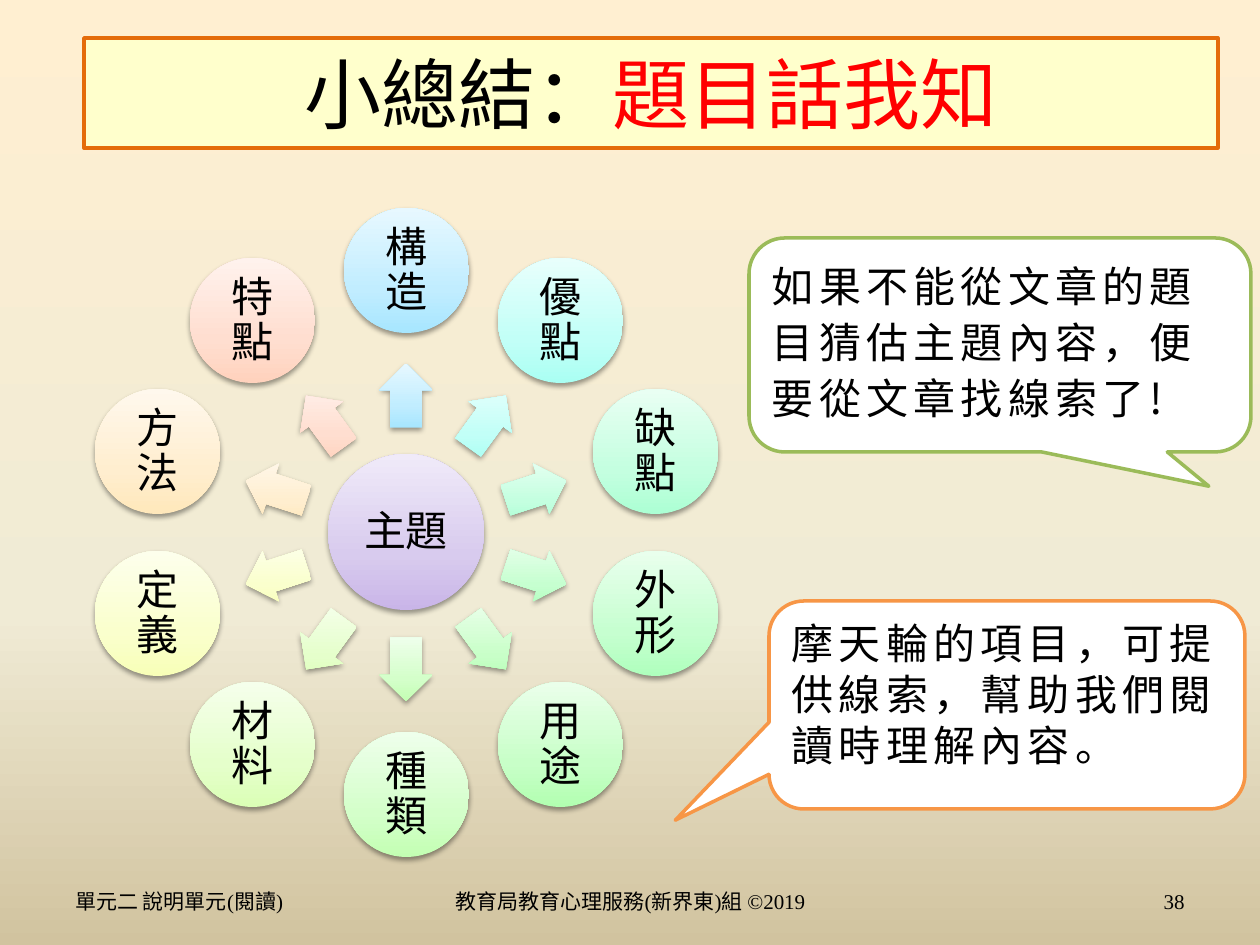
import math
import pptx
import pptx.util
import pptx.dml.color
import pptx.enum.shapes
import pptx.enum.text
import pptx.oxml.ns
import lxml.etree

PX = 914400 // 126
FONT = "Noto Sans CJK SC"
SERIF = "Times New Roman"
KIND = pptx.enum.shapes.MSO_SHAPE
ALIGN = pptx.enum.text.PP_ALIGN
ANCHOR = pptx.enum.text.MSO_ANCHOR
HUB = (406, 532)
COLORS = {
    "ink": "000000", "red": "FF0000", "white": "FFFFFF", "cream": "FFFFCC",
    "rust": "E46C0A", "green": "9BBB59", "orange": "F79646",
}
SKY = [(0, "FFEFD1"), (65, "F0EBD5"), (100, "D1C39F")]
CORE = ("C9B5E8", "D8CBEE", "F0EAF9")
TOPICS = [
    ("構造", ("A7E6FF", "C1EDFF", "E7F8FF")),
    ("優點", ("AAFFF3", "C2FFF7", "E8FFFC")),
    ("缺點", ("ACFFD4", "C4FFE0", "E9FFF3")),
    ("外形", ("AFFFBD", "C6FFD0", "E9FFED")),
    ("用途", ("B2FFB1", "C8FFC8", "EAFFEA")),
    ("種類", ("C3FFB3", "D4FFCA", "EEFFEB")),
    ("材料", ("DBFFB6", "E5FFCB", "F5FFEB")),
    ("定義", ("F8FFB8", "FAFFCD", "FDFFEC")),
    ("方法", ("FFE8BB", "FFEECF", "FFF8ED")),
    ("特點", ("FFD2BD", "FFDED0", "FFF2ED")),
]


def rgb(name):
    """Return the colour of a palette name."""
    return pptx.dml.color.RGBColor.from_string(COLORS[name])


def add(node, tag, **attrs):
    """Append a DrawingML child with attributes and return it."""
    child = lxml.etree.SubElement(node, pptx.oxml.ns.qn(tag))
    for key, val in attrs.items():
        child.set(key, str(val))
    return child


def blend(fill, node, stops, angle):
    """Give a fill a linear gradient of (percent, hex) stops."""
    fill.gradient()
    grad = node.xpath(".//a:gradFill")[0]
    grad.set("rotWithShape", "0")
    for child in list(grad):
        grad.remove(child)
    items = add(grad, "a:gsLst")
    for pos, color in stops:
        add(add(items, "a:gs", pos=pos * 1000), "a:srgbClr", val=color)
    add(grad, "a:lin", ang=angle * 60000, scaled=0)


def glow(shape):
    """Put a soft shadow under a shape."""
    shape.shadow.inherit = False
    effects = shape._element.spPr.find(pptx.oxml.ns.qn("a:effectLst"))
    shade = add(effects, "a:outerShdw", blurRad=39370, dist=20320,
                dir=5400000, rotWithShape=0)
    add(add(shade, "a:srgbClr", val="000000"), "a:alpha", val=38000)


def write(shape, runs, size, frame={}, para={}, face=FONT, gap=0):
    """Write one paragraph of (text, colour) runs in a shape."""
    box = shape.text_frame
    line = box.paragraphs[0]
    for target, form in ((box, {"word_wrap": True, **frame}), (line, para)):
        for key, val in form.items():
            setattr(target, key, val)
    for text, color in runs:
        run = line.add_run()
        run.text = text
        run.font.color.rgb = rgb(color)
        for key, val in {"size": pptx.util.Pt(size), "name": face}.items():
            setattr(run.font, key, val)
        props = run._r.get_or_add_rPr()
        add(props, "a:ea", typeface=FONT)
        if gap:
            props.set("spc", str(gap * 100))


def place(shapes, kind, box, adjust=()):
    """Add a preset shape at a px box."""
    shape = shapes.add_shape(kind, *(n * PX for n in box))
    for i, val in enumerate(adjust):
        shape.adjustments[i] = val
    return shape


def tint(shape, tones):
    """Give a wheel part its gradient and shadow."""
    shape.line.fill.background()
    blend(shape.fill, shape._element.spPr, list(zip((0, 35, 100), tones)), 270)
    glow(shape)


def disc(shapes, mid, size, text, tones):
    """Add a labelled circle around a point."""
    box = (mid[0] - size // 2, mid[1] - size // 2, size, size)
    shape = place(shapes, KIND.OVAL, box)
    tint(shape, tones)
    sides = ("left", "top", "right", "bottom")
    frame = {"margin_" + side: 4 * PX for side in sides}
    write(shape, [(text, "ink")], 24, {**frame, "vertical_anchor": ANCHOR.MIDDLE},
          {"alignment": ALIGN.CENTER, "line_spacing": pptx.util.Pt(26)})


def arrow(shapes, mid, turn, tones):
    """Add a block arrow around a point, turned outward."""
    box = (mid[0] - 32, mid[1] - 26, 64, 53)
    shape = place(shapes, KIND.RIGHT_ARROW, box, (0.6, 0.5))
    shape.rotation = turn
    tint(shape, tones)


def spot(reach, turn):
    """Return the px point at a distance and angle from the hub."""
    rad = math.radians(turn)
    return (round(HUB[0] + reach * math.cos(rad)),
            round(HUB[1] + reach * math.sin(rad)))


def wheel(slide):
    """Draw the hub with its ring of topics."""
    shapes = slide.shapes.add_group_shape().shapes
    disc(shapes, HUB, 156, "主題", CORE)
    step = 360 // len(TOPICS)
    for i, (text, tones) in enumerate(TOPICS):
        turn = (270 + i * step) % 360
        arrow(shapes, spot(137, turn), turn, tones)
        disc(shapes, spot(262, turn), 125, text, tones)


def panel(slide, kind, box, fill, edge, adjust=()):
    """Add a flat outlined shape."""
    shape = place(slide.shapes, kind, box, adjust)
    shape.shadow.inherit = False
    shape.fill.solid()
    shape.fill.fore_color.rgb = rgb(fill)
    shape.line.color.rgb = rgb(edge)
    shape.line.width = pptx.util.Pt(2)
    return shape


def bubble(slide, box, edge, tail, text, lead, before):
    """Add a speech bubble."""
    shape = panel(slide, KIND.ROUNDED_RECTANGULAR_CALLOUT, box, "white", edge,
                  (*tail, 0.167))
    para = {"alignment": ALIGN.LEFT, "line_spacing": pptx.util.Pt(lead),
            "space_before": pptx.util.Pt(before)}
    write(shape, [(text, "ink")], 24, {"vertical_anchor": ANCHOR.TOP}, para, gap=3)


def note(slide, left, width, text, align):
    """Add a footer text."""
    box = slide.shapes.add_textbox(*(n * PX for n in (left, 876, width, 50)))
    write(box, [(text, "ink")], 12, {"vertical_anchor": ANCHOR.MIDDLE},
          {"alignment": align}, SERIF)


def main():
    """Build and save the slide."""
    deck = pptx.Presentation()
    deck.slide_width, deck.slide_height = 1260 * PX, 945 * PX
    slide = deck.slides.add_slide(deck.slide_layouts[6])
    blend(slide.background.fill, slide._element, SKY, 90)
    wheel(slide)
    note(slide, 63, 294, "單元二 說明單元(閱讀)", ALIGN.LEFT)
    note(slide, 431, 399, "教育局教育心理服務(新界東)組 ©2019", ALIGN.CENTER)
    note(slide, 903, 294, "38", ALIGN.RIGHT)
    bubble(slide, (749, 238, 502, 214), "green", (0.416, 0.66),
           "如果不能從文章的題目猜估主題內容，便要從文章找線索了!", 32, 5)
    bubble(slide, (769, 601, 476, 208), "orange", (-0.697, 0.554),
           "摩天輪的項目，可提供線索，幫助我們閱讀時理解內容。", 29, 0)
    title = panel(slide, KIND.RECTANGLE, (84, 38, 1134, 110), "cream", "rust")
    write(title, [("小總結：", "ink"), ("題目話我知", "red")], 44,
          {"vertical_anchor": ANCHOR.MIDDLE}, {"alignment": ALIGN.CENTER})
    deck.save("out.pptx")


if __name__ == "__main__":
    main()
